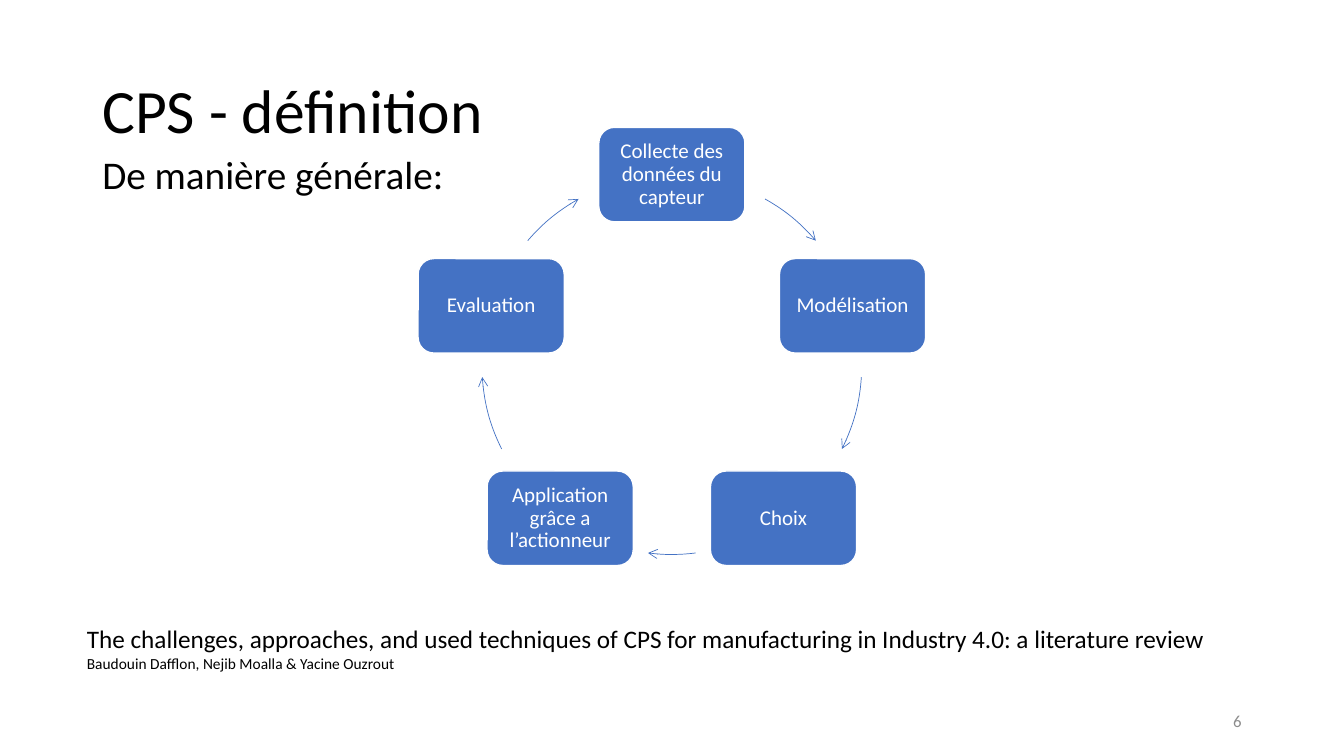
from dataclasses import dataclass
from math import cos, radians, sin

from lxml.etree import SubElement
from pptx import Presentation
from pptx.dml.color import RGBColor
from pptx.enum.shapes import MSO_SHAPE
from pptx.enum.text import MSO_ANCHOR, PP_ALIGN
from pptx.oxml.ns import qn
from pptx.util import Pt


@dataclass(frozen=True)
class Theme:
    font: str = "Calibri"
    text: RGBColor = RGBColor(0x00, 0x00, 0x00)
    muted: RGBColor = RGBColor(0x8C, 0x8C, 0x8C)
    accent: RGBColor = RGBColor(0x44, 0x72, 0xC4)
    light: RGBColor = RGBColor(0xFF, 0xFF, 0xFF)
    title: float = 44
    body: float = 28
    source: float = 18
    node: float = 15
    number: float = 12
    authors: float = 11


@dataclass(frozen=True)
class Line:
    text: str
    size: float
    color: RGBColor
    format: dict


@dataclass(frozen=True)
class TextBox:
    left: float
    top: float
    width: float
    height: float
    anchor: MSO_ANCHOR
    lines: tuple[Line, ...]


@dataclass(frozen=True)
class Step:
    label: str
    arrow_start: float  # degrees clockwise from the top of the ring
    arrow_end: float


THEME = Theme()

# Ring geometry, in points
CENTER_X, CENTER_Y, RADIUS = 479.9, 260.4, 135.7
NODE_W, NODE_H = 104.4, 67.5

STEPS = (
    Step("Collecte des données du capteur", 29.4, 49.3),
    Step("Modélisation", 93.8, 116.4),
    Step("Choix", 172.8, 187.2),
    Step("Application grâce a l’actionneur", 243.6, 266.2),
    Step("Evaluation", 310.7, 330.6),
)

TEXT_BOXES = (
    TextBox(66, 28.75, 828, 104.4, MSO_ANCHOR.MIDDLE, (
        Line("CPS - définition", THEME.title, THEME.text, {"line_spacing": 0.9}),
    )),
    TextBox(66, 107.3, 828, 342.7, MSO_ANCHOR.TOP, (
        Line("De manière générale:", THEME.body, THEME.text,
             {"line_spacing": 0.9, "space_before": Pt(10)}),
    )),
    TextBox(678, 500.5, 216, 28.75, MSO_ANCHOR.MIDDLE, (
        Line("6", THEME.number, THEME.muted, {"alignment": PP_ALIGN.RIGHT}),
    )),
    TextBox(55, 442, 849.6, 44, MSO_ANCHOR.TOP, (
        Line("The challenges, approaches, and used techniques of CPS for "
             "manufacturing in Industry 4.0: a literature review",
             THEME.source, THEME.text, {}),
        Line("Baudouin Dafflon, Nejib Moalla & Yacine Ouzrout",
             THEME.authors, THEME.text, {}),
    )),
)


def apply_format(target, values: dict) -> None:
    for name, value in values.items():
        setattr(target, name, value)


def write_lines(tf, lines: tuple[Line, ...], anchor: MSO_ANCHOR) -> None:
    apply_format(tf, {"word_wrap": True, "vertical_anchor": anchor})
    for i, line in enumerate(lines):
        p = tf.paragraphs[0] if i == 0 else tf.add_paragraph()
        apply_format(p, line.format)
        r = p.add_run()
        r.text = line.text
        apply_format(r.font, {"name": THEME.font, "size": Pt(line.size)})
        r.font.color.rgb = line.color


def add_text_box(shapes, box: TextBox) -> None:
    sp = shapes.add_textbox(Pt(box.left), Pt(box.top), Pt(box.width), Pt(box.height))
    write_lines(sp.text_frame, box.lines, box.anchor)


def add_node(shapes, label: str, angle: float) -> None:
    x = CENTER_X + RADIUS * sin(radians(angle))
    y = CENTER_Y - RADIUS * cos(radians(angle))
    sp = shapes.add_shape(MSO_SHAPE.ROUNDED_RECTANGLE, Pt(x - NODE_W / 2),
                          Pt(y - NODE_H / 2), Pt(NODE_W), Pt(NODE_H))
    sp.shadow.inherit = False
    sp.fill.solid()
    sp.fill.fore_color.rgb = THEME.accent
    sp.line.color.rgb = THEME.light
    sp.line.width = Pt(1)
    sides = ("left", "top", "right", "bottom")
    apply_format(sp.text_frame, {f"margin_{side}": Pt(7.5) for side in sides})
    line = Line(label, THEME.node, THEME.light,
                {"alignment": PP_ALIGN.CENTER, "line_spacing": 0.9})
    write_lines(sp.text_frame, (line,), MSO_ANCHOR.MIDDLE)


def add_ring_arrow(shapes, start: float, end: float) -> None:
    sp = shapes.add_shape(MSO_SHAPE.ARC, Pt(CENTER_X - RADIUS), Pt(CENTER_Y - RADIUS),
                          Pt(2 * RADIUS), Pt(2 * RADIUS))
    # Arc angles run from the right; one degree is 0.6 adjustment units
    for i, angle in enumerate((start, end)):
        sp.adjustments[i] = (angle - 90) % 360 * 0.6
    sp.shadow.inherit = False
    sp.fill.background()
    sp.line.color.rgb = THEME.accent
    sp.line.width = Pt(0.5)
    SubElement(sp.line._get_or_add_ln(), qn("a:tailEnd"), type="arrow")


def main() -> None:
    prs = Presentation()
    prs.slide_width, prs.slide_height = Pt(960), Pt(540)
    shapes = prs.slides.add_slide(prs.slide_layouts[6]).shapes

    # Title, lead-in, slide number and source
    for box in TEXT_BOXES:
        add_text_box(shapes, box)

    # Cycle of steps, evenly spaced clockwise from the top
    for i, step in enumerate(STEPS):
        add_node(shapes, step.label, i * 360 / len(STEPS))
        add_ring_arrow(shapes, step.arrow_start, step.arrow_end)

    prs.save("out.pptx")


if __name__ == "__main__":
    main()
